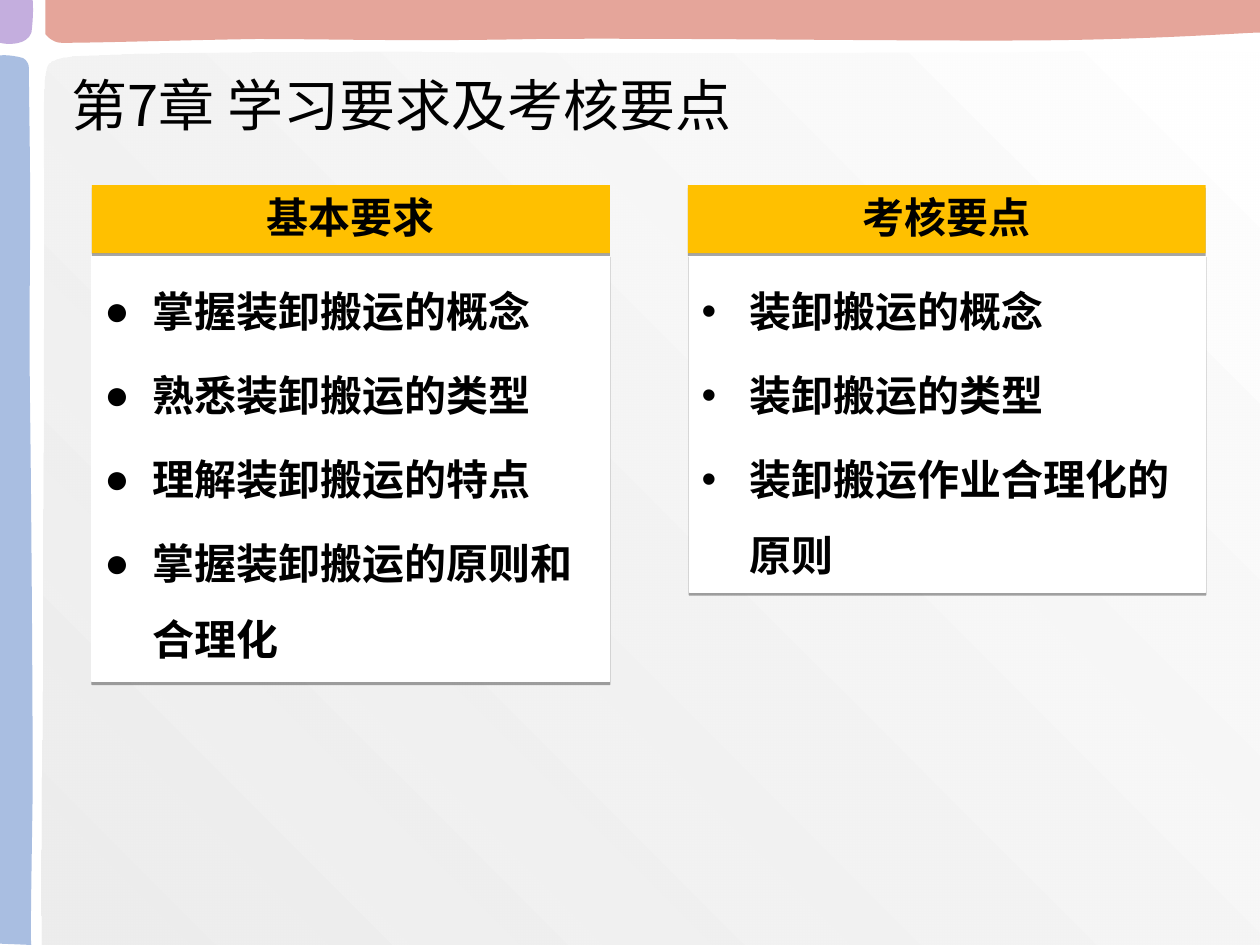
"""Build the chapter 7 slide on learning requirements and assessment points."""
from dataclasses import dataclass

from lxml import etree
from pptx import Presentation
from pptx import util as u
from pptx.dml.color import RGBColor
from pptx.enum import shapes, text
from pptx.oxml.ns import qn

PX = 9144
BLACK = RGBColor(0, 0, 0)
WHITE = RGBColor(255, 255, 255)
GOLD = RGBColor(255, 192, 0)
PALE_GREY = RGBColor(0xE6, 0xE6, 0xE6)
ROSE = RGBColor(0xDA, 0x7F, 0x70)
BLUE = RGBColor(0x85, 0xA3, 0xD5)
VIOLET = RGBColor(0xAC, 0x8C, 0xD0)
TITLE_FONT = "Noto Sans CJK JP"
BODY_FONT = "Noto Sans CJK SC"
BULLET_FONT = "Arial"


@dataclass(frozen=True)
class Panel:
    """A brush-edged area; a segment holds one line end or three curve points."""
    color: RGBColor
    start: tuple[int, int]
    segments: tuple[tuple[int, ...], ...]
    graded: bool = False


@dataclass(frozen=True)
class Card:
    """A heading bar with a bulleted list below it."""
    left: int
    body_left: int
    body_width: int
    body_height: int
    heading: str
    bullet: str
    items: tuple[str, ...]


PANELS = (
    Panel(PALE_GREY, (1000, 750), (
        (1000, 42), (886, 38, 855, 42, 760, 42), (666, 42, 550, 43, 433, 42),
        (316, 41, 123, 41, 57, 45), (36, 48, 36, 49, 35, 73),
        (34, 96, 35, 110, 35, 182), (35, 256, 34, 412, 34, 506),
        (34, 601, 32, 662, 33, 750), (517, 750, 1000, 750, 1000, 750)),
        graded=True),
    Panel(ROSE, (1000, 0), (
        (1000, 26), (1001, 25, 928, 31, 832, 32), (736, 33, 531, 30, 426, 31),
        (321, 33, 265, 31, 203, 31), (140, 32, 77, 34, 49, 34),
        (41, 34, 36, 27, 36, 27), (36, 27, 36, 14, 36, 0), (1000, 0))),
    Panel(BLUE, (0, 749), (
        (25, 750), (24, 751, 25, 698, 26, 628), (26, 558, 25, 407, 24, 330),
        (23, 254, 24, 212, 24, 167), (24, 121, 23, 75, 23, 54),
        (23, 48, 18, 46, 18, 46), (7, 43, 0, 44, 0, 44), (0, 749))),
    Panel(VIOLET, (0, 0), (
        (26, 0), (27, 12, 25, 26, 25, 26), (23, 31, 19, 33, 15, 34),
        (7, 36, 0, 34, 0, 34), (0, 0))),
)
CARDS = (
    Card(73, 73, 411, 339, "基本要求", "●", (
        "掌握装卸搬运的概念", "熟悉装卸搬运的类型",
        "理解装卸搬运的特点", "掌握装卸搬运的原则和合理化")),
    Card(546, 547, 410, 268, "考核要点", "•", (
        "装卸搬运的概念", "装卸搬运的类型", "装卸搬运作业合理化的原则")),
)


def bend_edges(shape, panel: Panel) -> None:
    """Turn the straight edges of curved segments into cubic curves."""
    edges = list(shape.element.spPr.iter(qn("a:lnTo")))
    for edge, segment in zip(edges, panel.segments):
        if len(segment) == 2:
            continue
        curve = etree.Element(qn("a:cubicBezTo"))
        for x, y in zip(segment[::2], segment[1::2]):
            etree.SubElement(curve, qn("a:pt"), x=str(x * PX - shape.left),
                             y=str(y * PX - shape.top))
        edge.getparent().replace(edge, curve)


def draw_panel(page, panel: Panel) -> None:
    """Draw a translucent panel."""
    start, *ends = [(x * PX, y * PX) for x, y in
                    (panel.start, *(part[-2:] for part in panel.segments))]
    builder = page.shapes.build_freeform(*start)
    builder.add_line_segments(ends, close=True)
    shape = builder.convert_to_shape()
    bend_edges(shape, panel)
    shape.shadow.inherit = False
    if panel.graded:
        shape.fill.gradient()
        shape.fill.gradient_angle = 45
        for stop, color in zip(shape.fill.gradient_stops, (panel.color, WHITE)):
            stop.color.rgb = color
    else:
        shape.fill.solid()
        shape.fill.fore_color.rgb = panel.color
    shape.line.fill.background()
    tint = next(shape.element.spPr.iter(qn("a:srgbClr")))
    etree.SubElement(tint, qn("a:alpha"), val="70000")


def write(box, *lines: str, size: int = 24, font: str = BODY_FONT,
          bold: bool = True, align=text.PP_ALIGN.LEFT,
          anchor=text.MSO_ANCHOR.TOP, bullet: str = "") -> None:
    """Fill a box with one paragraph per line."""
    frame = box.text_frame
    frame.word_wrap = True
    frame.vertical_anchor = anchor
    for index, line in enumerate(lines):
        para = frame.add_paragraph() if index else frame.paragraphs[0]
        if bullet:
            props = para._p.get_or_add_pPr()
            props.set("marL", str(38 * PX))
            props.set("indent", str(-38 * PX))
            etree.SubElement(props, qn("a:buFont"), typeface=BULLET_FONT)
            etree.SubElement(props, qn("a:buChar"), char=bullet)
            para.line_spacing = 1.5
        if index:
            para.space_before = u.Pt(4.8)
        para.alignment = align
        span = para.add_run()
        span.text = line
        span.font.size = u.Pt(size)
        span.font.bold = bold
        span.font.name = font
        span.font.color.rgb = BLACK
        etree.SubElement(span.font._element, qn("a:ea"), typeface=font)


def add_block(page, left: int, top: int, width: int, height: int,
              fill: RGBColor, line: RGBColor | None = None):
    """Add a rectangle with a thin shadow below it."""
    block = page.shapes.add_shape(
        shapes.MSO_SHAPE.RECTANGLE, *(n * PX for n in (left, top, width, height)))
    block.fill.solid()
    block.fill.fore_color.rgb = fill
    if line is None:
        block.line.fill.background()
    else:
        block.line.color.rgb = line
        block.line.width = u.Pt(0.75)
    block.shadow.inherit = False
    effects = block.element.spPr.find(qn("a:effectLst"))
    shadow = etree.SubElement(effects, qn("a:outerShdw"), blurRad="0",
                              dist=str(u.Pt(1.6)), dir="5400000", rotWithShape="0")
    color = etree.SubElement(shadow, qn("a:srgbClr"), val=str(BLACK))
    etree.SubElement(color, qn("a:alpha"), val="34000")
    return block


def draw_card(page, card: Card) -> None:
    """Draw a list and its heading bar."""
    body = add_block(page, card.body_left, 202, card.body_width,
                     card.body_height, WHITE, WHITE)
    write(body, *card.items, bullet=card.bullet)
    header = add_block(page, card.left, 147, 411, 54, GOLD)
    write(header, card.heading, align=text.PP_ALIGN.CENTER)


def main() -> None:
    """Build and save the deck."""
    deck = Presentation()
    deck.slide_width, deck.slide_height = 1000 * PX, 750 * PX
    page = deck.slides.add_slide(deck.slide_layouts[6])
    for panel in PANELS:
        draw_panel(page, panel)
    title = page.shapes.add_textbox(47 * PX, 31 * PX, 603 * PX, 103 * PX)
    write(title, "第7章 学习要求及考核要点", size=32, font=TITLE_FONT,
          bold=False, anchor=text.MSO_ANCHOR.MIDDLE)
    for card in CARDS:
        draw_card(page, card)
    deck.save("out.pptx")


if __name__ == "__main__":
    main()
